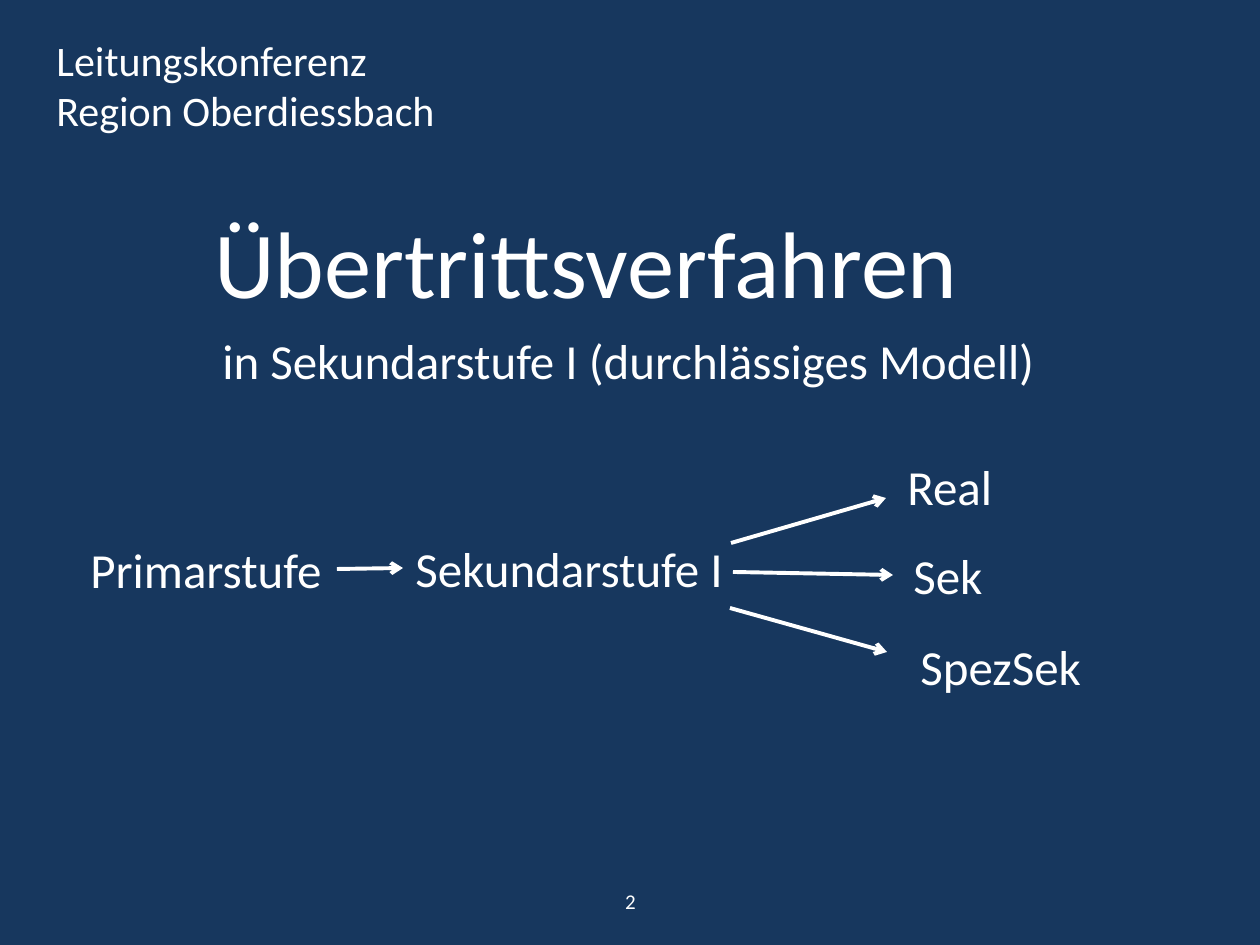
from lxml import etree
from pptx import Presentation
from pptx import util as u
from pptx.dml.color import RGBColor
from pptx.enum import shapes, text
from pptx.oxml.ns import qn

NAVY = RGBColor(0x17, 0x37, 0x5E)
WHITE = RGBColor(0xFF, 0xFF, 0xFF)
PX_PER_INCH = 126


def px(length):
    return u.Emu(round(length * 914400 / PX_PER_INCH))


class SlideBuilder:
    font = "Calibri"
    color = WHITE
    label_size = 28
    line_width = 2.25

    def __init__(self, slide):
        self.slide = slide
        fill = slide.background.fill
        fill.solid()
        fill.fore_color.rgb = NAVY

    def label(self, box, *lines, size=label_size, wrap=False):
        frame = self.slide.shapes.add_textbox(*map(px, box)).text_frame
        frame.word_wrap = wrap
        frame.auto_size = text.MSO_AUTO_SIZE.SHAPE_TO_FIT_TEXT
        frame.text = "\n".join(lines)
        for paragraph in frame.paragraphs:
            paragraph.font.name = self.font
            paragraph.font.size = u.Pt(size)
            paragraph.font.color.rgb = self.color
        return frame

    def page_number(self, box, number):
        frame = self.label(box, number, size=12, wrap=True)
        frame.auto_size = text.MSO_AUTO_SIZE.NONE
        frame.vertical_anchor = text.MSO_ANCHOR.MIDDLE
        frame.paragraphs[0].alignment = text.PP_ALIGN.CENTER

    def arrow(self, *ends):
        arrow = self.slide.shapes.add_connector(
            shapes.MSO_CONNECTOR.STRAIGHT, *map(px, ends))
        arrow.line.color.rgb = self.color
        arrow.line.width = u.Pt(self.line_width)
        etree.SubElement(arrow.line._get_or_add_ln(), qn("a:tailEnd"), type="arrow")
        etree.SubElement(arrow._element.spPr, qn("a:effectLst"))


def main():
    deck = Presentation()
    deck.slide_width, deck.slide_height = px(1260), px(945)
    page = SlideBuilder(deck.slides.add_slide(deck.slide_layouts[6]))

    # Header and title
    page.label((44, 28, 423, 115), "Leitungskonferenz", "Region Oberdiessbach", size=24)
    page.label((202, 198, 780, 127), "Übertrittsverfahren", size=54)
    page.label((210, 324, 848, 72), "in Sekundarstufe I (durchlässiges Modell)")

    # School levels
    page.label((78, 533, 260, 72), "Primarstufe")
    page.label((403, 532, 336, 72), "Sekundarstufe I")

    # Tracks of the secondary level
    page.label((895, 450, 111, 72), "Real")
    page.label((901, 539, 146, 97), "Sek", wrap=True)
    page.label((908, 630, 198, 97), "SpezSek", wrap=True)

    # Transitions
    for ends in (
        (337, 569, 403, 568),
        (731, 543, 886, 498),
        (733, 572, 893, 575),
        (730, 608, 887, 652),
    ):
        page.arrow(*ends)

    # Footer
    page.page_number((431, 876, 399, 50), "2")

    deck.save("out.pptx")


if __name__ == "__main__":
    main()
